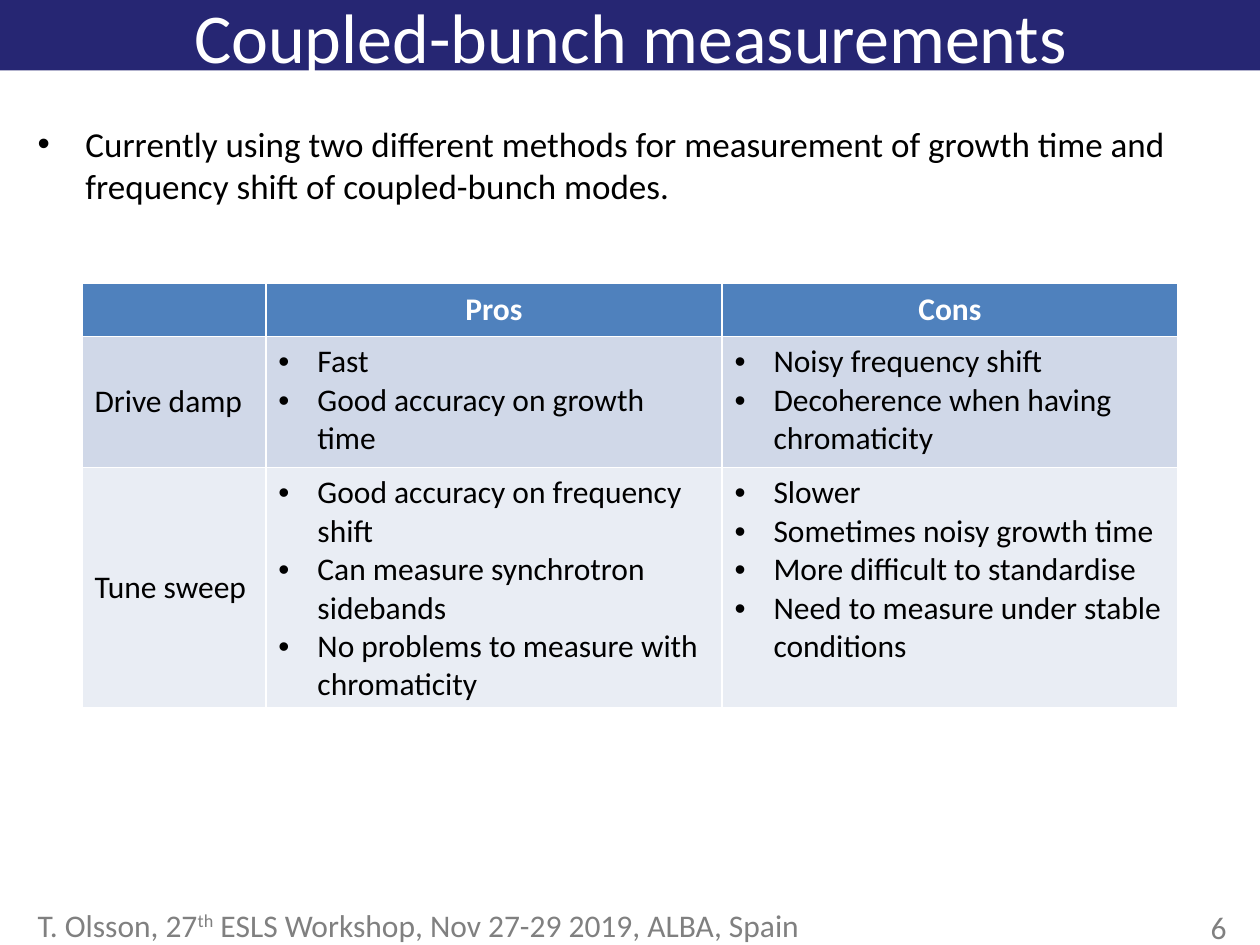
from lxml.etree import SubElement
from pptx import Presentation
from pptx.dml.color import RGBColor
from pptx.enum.shapes import MSO_SHAPE
from pptx.enum.text import MSO_ANCHOR as Anchor, PP_ALIGN as Align
from pptx.oxml.ns import qn
from pptx.util import Inches, Pt

NAVY = RGBColor(0x26, 0x26, 0x73)
HEADER = RGBColor(0x4F, 0x81, 0xBD)
BANDS = [RGBColor(0xD0, 0xD8, 0xE8), RGBColor(0xE9, 0xED, 0xF4)]
WHITE = RGBColor(0xFF, 0xFF, 0xFF)
BLACK = RGBColor(0, 0, 0)
GRAY = RGBColor(0x80, 0x80, 0x80)

COL_WIDTHS = [1.46, 3.62, 3.62]
ROW_HEIGHTS = [0.42, 1.04, 1.91]
HEADINGS = ["", "Pros", "Cons"]
METHODS = [
    ("Drive damp",
     ["Fast", "Good accuracy on growth time"],
     ["Noisy frequency shift", "Decoherence when having chromaticity"]),
    ("Tune sweep",
     ["Good accuracy on frequency shift", "Can measure synchrotron sidebands",
      "No problems to measure with chromaticity"],
     ["Slower", "Sometimes noisy growth time", "More difficult to standardise",
      "Need to measure under stable conditions"]),
]


def style(font, size, color, bold=False):
    values = {"name": "Calibri", "size": Pt(size), "bold": bold}
    for name, value in values.items():
        setattr(font, name, value)
    font.color.rgb = color


def add_bullet(p, indent):
    pPr = p._p.get_or_add_pPr()
    pPr.set("marL", str(Inches(indent)))
    pPr.set("indent", str(-Inches(indent)))
    SubElement(pPr, qn("a:buFont"), typeface="Arial")
    SubElement(pPr, qn("a:buChar"), char="•")


def write_lines(tf, lines, size, color, bold=False, align=Align.LEFT, indent=None):
    for i, line in enumerate(lines):
        p = tf.add_paragraph() if i else tf.paragraphs[0]
        p.alignment = align
        if indent:
            add_bullet(p, indent)
        r = p.add_run()
        r.text = line
        style(r.font, size, color, bold)


def add_text_frame(s, left, top, width, height):
    tf = s.shapes.add_textbox(*map(Inches, (left, top, width, height))).text_frame
    tf.word_wrap = True
    return tf


def add_title(s, text):
    """Fill the title placeholder and put the navy bar behind it."""
    title = s.shapes.title
    box = {"left": 0.2, "top": -0.11, "width": 9.61, "height": 0.79}
    for name, value in box.items():
        setattr(title, name, Inches(value))
    tf = title.text_frame
    tf.vertical_anchor = Anchor.MIDDLE
    write_lines(tf, [text], 40, WHITE, align=Align.CENTER)

    bar = s.shapes.add_shape(MSO_SHAPE.RECTANGLE, 0, 0, Inches(10), Inches(0.56))
    bar.shadow.inherit = False
    bar.fill.solid()
    bar.fill.fore_color.rgb = NAVY
    bar.line.fill.background()
    title.element.addprevious(bar.element)


def add_footer(s):
    p = add_text_frame(s, 0.2, 7.14, 7.72, 0.42).paragraphs[0]
    for text, baseline in [("T. Olsson, 27", 0), ("th", 30000),
                           (" ESLS Workshop, Nov 27-29 2019, ALBA, Spain", 0)]:
        r = p.add_run()
        r.text = text
        style(r.font, 18, GRAY)
        if baseline:
            r._r.get_or_add_rPr().set("baseline", str(baseline))
    write_lines(add_text_frame(s, 9.51, 7.16, 0.69, 0.42), ["6"], 18, GRAY)


def fill_cell(cell, lines, fill, color=BLACK, anchor=Anchor.MIDDLE, **text_format):
    cell.fill.solid()
    cell.fill.fore_color.rgb = fill
    cell.vertical_anchor = anchor
    write_lines(cell.text_frame, lines, 18, color, **text_format)


def add_methods_table(s):
    table = s.shapes.add_table(
        len(ROW_HEIGHTS), len(COL_WIDTHS), Inches(0.65), Inches(2.25),
        Inches(sum(COL_WIDTHS)), Inches(sum(ROW_HEIGHTS))).table
    for col, width in zip(table.columns, COL_WIDTHS):
        col.width = Inches(width)
    for row, height in zip(table.rows, ROW_HEIGHTS):
        row.height = Inches(height)

    for c, heading in enumerate(HEADINGS):
        fill_cell(table.cell(0, c), [heading] if heading else [], HEADER, WHITE,
                  bold=True, align=Align.CENTER)
    for i, ((method, *lists), band) in enumerate(zip(METHODS, BANDS), start=1):
        fill_cell(table.cell(i, 0), [method], band)
        for c, points in enumerate(lists, start=1):
            fill_cell(table.cell(i, c), points, band, anchor=Anchor.TOP, indent=0.31)


def main():
    prs = Presentation()
    prs.slide_width, prs.slide_height = Inches(10), Inches(7.5)
    s = prs.slides.add_slide(prs.slide_layouts[5])
    add_title(s, "Coupled-bunch measurements")
    add_footer(s)
    body = add_text_frame(s, 0.2, 0.92, 9.61, 6.22)
    write_lines(body, ["Currently using two different methods for measurement of growth "
                       "time and frequency shift of coupled-bunch modes."],
                20, BLACK, indent=0.38)
    add_methods_table(s)
    prs.save("out.pptx")


if __name__ == "__main__":
    main()
